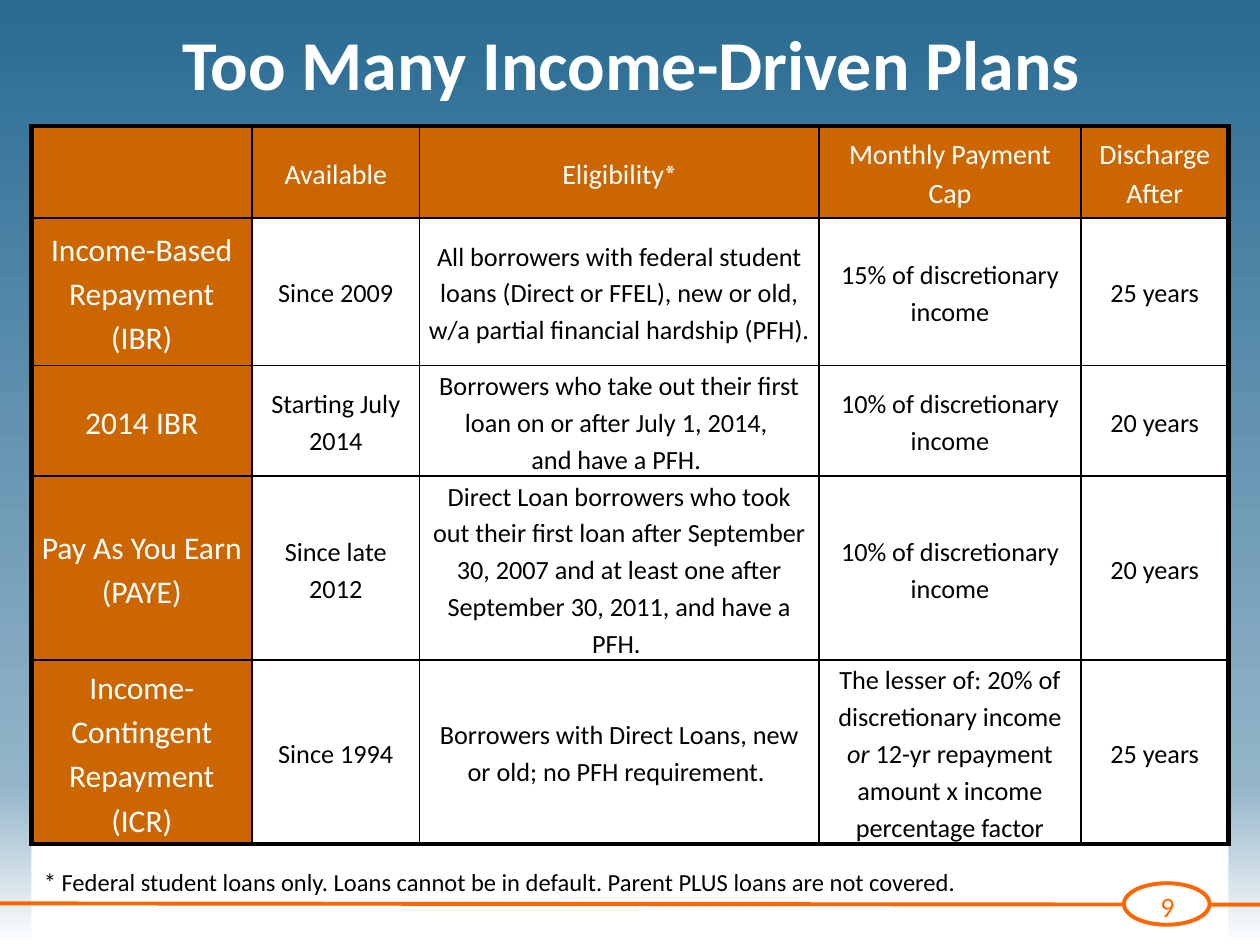
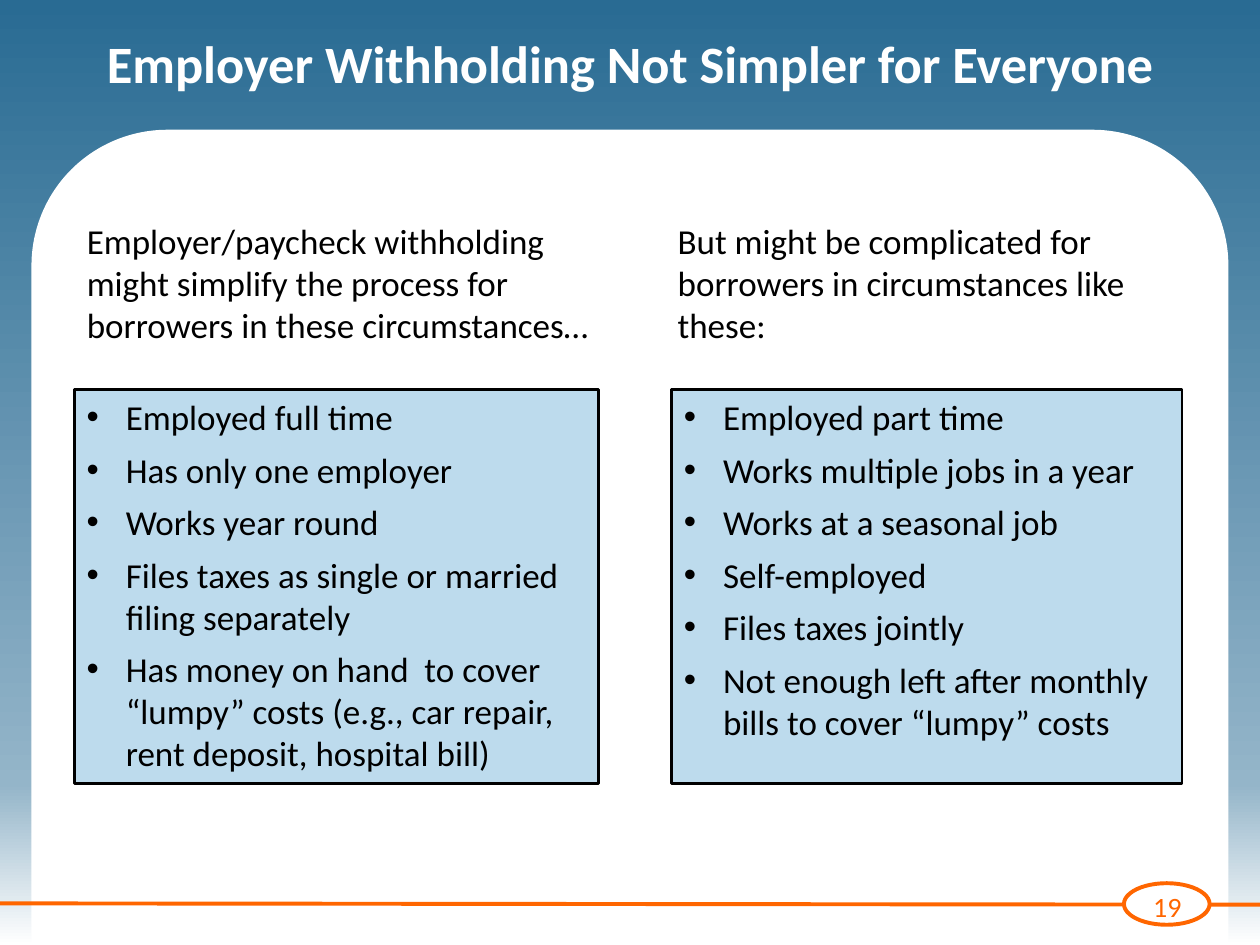
"""Build two slides about student loan repayment plans and employer withholding."""
from copy import deepcopy
from dataclasses import dataclass

from lxml import etree
from pptx import Presentation
from pptx import util as u
from pptx.dml.color import RGBColor
from pptx.enum import shapes, text
from pptx.oxml import ns


@dataclass(frozen=True)
class Theme:
    font: str = "Calibri"
    symbol_font: str = "Cambria"
    white: RGBColor = RGBColor.from_string("FFFFFF")
    black: RGBColor = RGBColor.from_string("000000")
    accent: RGBColor = RGBColor.from_string("FF6600")
    header: RGBColor = RGBColor.from_string("CC6600")
    panel: RGBColor = RGBColor.from_string("BDDBED")
    background: tuple = ((0, "296B93"), (0.83, "94B5C9"), (1, "FFFFFF"))
    list_size: int = 20
    plan_size: int = 18
    label_size: int = 16
    cell_size: int = 15
    note_size: int = 14


theme = Theme()


def style(paragraph, size, color, bold=None, align=None):
    paragraph.alignment = align
    for run in paragraph.runs:
        run.font.name = theme.font
        run.font.size = u.Pt(size)
        run.font.color.rgb = color
        run.font.bold = bold


def add_text(slide, box, content, size, color, bold=None, align=None,
             anchor=text.MSO_ANCHOR.TOP):
    shape = slide.shapes.add_textbox(*map(u.Inches, box))
    text_frame = shape.text_frame
    text_frame.word_wrap = True
    text_frame.vertical_anchor = anchor
    text_frame.text = content
    for paragraph in text_frame.paragraphs:
        style(paragraph, size, color, bold, align)
    return shape


CENTER = text.PP_ALIGN.CENTER
MIDDLE = text.MSO_ANCHOR.MIDDLE

presentation = Presentation()
presentation.slide_width = u.Inches(10)
presentation.slide_height = u.Inches(7.5)

slide_heads = [
    ("Too Many Income-Driven Plans", 40, (0.42, 0.08, 9.18, 0.83), "9"),
    ("Employer Withholding Not Simpler for Everyone", 30, (0.17, 0.08, 9.67, 0.83), "19"),
]
slides = []
for title, title_size, title_box, number in slide_heads:
    slide = presentation.slides.add_slide(presentation.slide_layouts[6])
    slides.append(slide)

    fill = slide.background.fill
    fill.gradient()
    fill.gradient_angle = 270
    stop_list = slide.element.find(".//" + ns.qn("a:gsLst"))
    stop_list.insert(1, deepcopy(stop_list[0]))
    for stop, (position, color) in zip(fill.gradient_stops, theme.background):
        stop.position = position
        stop.color.rgb = RGBColor.from_string(color)

    page = slide.shapes.add_shape(
        shapes.MSO_SHAPE.ROUND_2_SAME_RECTANGLE,
        u.Inches(0.25), u.Inches(1.03), u.Inches(9.5), u.Inches(6.47))
    page.shadow.inherit = False
    page.fill.solid()
    page.fill.fore_color.rgb = theme.white
    page.line.fill.background()

    rule = slide.shapes.add_connector(
        shapes.MSO_CONNECTOR.STRAIGHT,
        u.Inches(0), u.Inches(7.17), u.Inches(10), u.Inches(7.18))
    etree.SubElement(rule.element.spPr, ns.qn("a:effectLst"))

    number_box = add_text(slide, (8.93, 7.01, 0.67, 0.37), number,
                          theme.label_size, theme.accent, align=CENTER)
    number_box.fill.solid()
    number_box.fill.fore_color.rgb = theme.white

    ring = slide.shapes.add_shape(
        shapes.MSO_SHAPE.OVAL,
        u.Inches(8.92), u.Inches(7.01), u.Inches(0.68), u.Inches(0.33))
    ring.shadow.inherit = False
    ring.fill.background()
    for outlined in (rule, ring):
        outlined.line.color.rgb = theme.accent
        outlined.line.width = u.Pt(2.25)

    add_text(slide, title_box, title, title_size, theme.white, True, CENTER, MIDDLE)

plans_slide, withholding_slide = slides

plan_rows = [
    ["", "Available", "Eligibility|*", "Monthly Payment Cap", "Discharge After"],
    ["Income-Based Repayment (IBR)", "Since 2009",
     "All borrowers with federal student loans (Direct or FFEL), new or old, "
     "w/a partial financial hardship (PFH). ",
     "15% of discretionary income", "25 years"],
    ["2014 IBR", "Starting July 2014",
     "Borrowers who take out their first loan on or after July 1, 2014, \nand have a PFH. ",
     "10% of discretionary income", "20 years"],
    ["Pay As You Earn (PAYE)", "Since late 2012",
     "Direct Loan borrowers who took out their first loan after September 30, 2007 "
     "and at least one after September 30, 2011, and have a PFH. ",
     "10% of discretionary income", "20 years"],
    ["Income-Contingent Repayment (ICR)", "Since 1994",
     "Borrowers with Direct Loans, new or old; no PFH requirement. ",
     "The lesser of: 20% of discretionary income |or |"
     "12-yr repayment amount x income percentage factor", "25 years"],
]
column_widths = [1.75, 1.33, 3.17, 2.08, 1.17]
row_heights = [0.73, 1.17, 0.88, 1.46, 1.46]
last_row, last_column = len(row_heights) - 1, len(column_widths) - 1

table = plans_slide.shapes.add_table(
    len(row_heights), len(column_widths), u.Inches(0.25), u.Inches(1),
    u.Inches(sum(column_widths)), u.Inches(sum(row_heights))).table
table.first_row = table.horz_banding = False
for column, width in zip(table.columns, column_widths):
    column.width = u.Inches(width)
for row, height in zip(table.rows, row_heights):
    row.height = u.Inches(height)

for row_index, row_texts in enumerate(plan_rows):
    for column_index, content in enumerate(row_texts):
        cell = table.cell(row_index, column_index)
        cell.vertical_anchor = MIDDLE
        cell.margin_left = cell.margin_right = u.Inches(0.07)
        cell.margin_top = cell.margin_bottom = 0

        outer_edges = {"L": column_index == 0, "R": column_index == last_column,
                       "T": row_index == 0, "B": row_index == last_row}
        properties = cell._tc.get_or_add_tcPr()
        for side, is_outer in outer_edges.items():
            border = etree.SubElement(properties, ns.qn(f"a:ln{side}"),
                                      w=str(u.Pt(3 if is_outer else 1)))
            border_fill = etree.SubElement(border, ns.qn("a:solidFill"))
            etree.SubElement(border_fill, ns.qn("a:srgbClr"), val=str(theme.black))

        is_label = row_index == 0 or column_index == 0
        cell.fill.solid()
        cell.fill.fore_color.rgb = theme.header if is_label else theme.white
        color = theme.white if is_label else theme.black
        if row_index == 0:
            size = theme.label_size
        else:
            size = theme.plan_size if column_index == 0 else theme.cell_size

        lines = content.split("\n")
        cell.text_frame.text = "\n" * (len(lines) - 1)
        for paragraph, line in zip(cell.text_frame.paragraphs, lines):
            for part in filter(None, line.split("|")):
                paragraph.add_run().text = part
            style(paragraph, size, color, align=CENTER)
            paragraph.line_spacing = 1.15
            for run in paragraph.runs[1::2]:
                if row_index == 0:
                    run.font.name = theme.symbol_font
                else:
                    run.font.italic = True

footnote = add_text(
    plans_slide, (0.25, 6.83, 9, 0.33),
    "* Federal student loans only. Loans cannot be in default. "
    "Parent PLUS loans are not covered.", theme.note_size, theme.black)
footnote.text_frame.paragraphs[0].space_before = u.Pt(2.8)

circumstances = [
    ((0.59, 1.69, 4.25, 1.11),
     "Employer/paycheck withholding might simplify the process for borrowers "
     "in these circumstances…",
     (0.59, 3.09, 4.16, 3.13),
     ["Employed full time", "Has only one employer", "Works year round",
      "Files taxes as single or married filing separately",
      "Has money on hand  to cover “lumpy” costs (e.g., car repair, "
      "rent deposit, hospital bill)"]),
    ((5.28, 1.69, 4.1, 1.11),
     "But might be complicated for borrowers in circumstances like these:",
     (5.33, 3.09, 4.05, 3.13),
     ["Employed part time", "Works multiple jobs in a year", "Works at a seasonal job",
      "Self-employed", "Files taxes jointly",
      "Not enough left after monthly bills to cover “lumpy” costs"]),
]
for intro_box, intro, panel_box, items in circumstances:
    add_text(withholding_slide, intro_box, intro, theme.list_size, theme.black)
    panel = add_text(withholding_slide, panel_box, "\n".join(items),
                     theme.list_size, theme.black)
    panel.fill.solid()
    panel.fill.fore_color.rgb = theme.panel
    panel.line.color.rgb = theme.black
    panel.line.width = u.Pt(1.5)
    for paragraph in panel.text_frame.paragraphs:
        paragraph.space_after = u.Pt(6)
        properties = paragraph._p.get_or_add_pPr()
        properties.set("marL", str(u.Inches(0.31)))
        properties.set("indent", str(u.Inches(-0.31)))
        etree.SubElement(properties, ns.qn("a:buFont"), typeface="Arial")
        etree.SubElement(properties, ns.qn("a:buChar"), char="•")

presentation.save("out.pptx")
